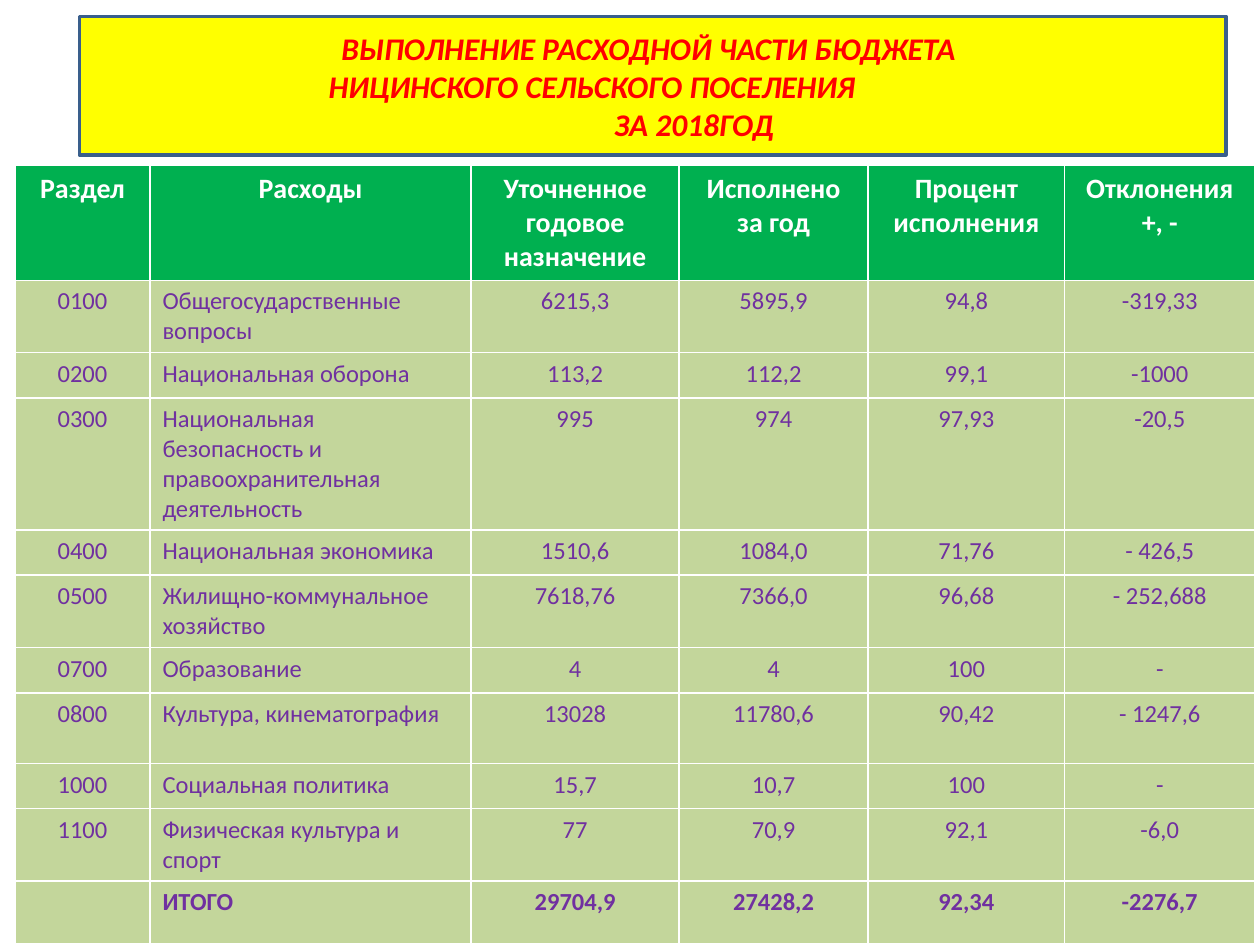
from pptx import Presentation
from pptx import util as u
from pptx.dml.color import RGBColor
from pptx.enum import shapes, text

COLUMN_WIDTHS = [1.07, 2.55, 1.65, 1.5, 1.56, 1.51]
ROW_HEIGHTS = [0.88, 0.56, 0.36, 1.02, 0.36, 0.56, 0.36, 0.56, 0.36, 0.56, 0.5]
BUDGET_ROWS = [
    ["Раздел", "Расходы", "Уточненное годовое назначение", "Исполнено за год",
     "Процент исполнения", "Отклонения +, -"],
    ["0100", "Общегосударственные вопросы", "6215,3", "5895,9", "94,8", "-319,33"],
    ["0200", "Национальная оборона", "113,2", "112,2", "99,1", "-1000"],
    ["0300", "Национальная безопасность и правоохранительная деятельность",
     "995", "974", "97,93", "-20,5"],
    ["0400", "Национальная экономика", "1510,6", "1084,0", "71,76", "- 426,5"],
    ["0500", "Жилищно-коммунальное хозяйство", "7618,76", "7366,0", "96,68", "- 252,688"],
    ["0700", "Образование", "4", "4", "100", "-"],
    ["0800", "Культура, кинематография", "13028", "11780,6", "90,42", "- 1247,6"],
    ["1000", "Социальная политика", "15,7", "10,7", "100", "-"],
    ["1100", "Физическая культура и спорт", "77", "70,9", "92,1", "-6,0"],
    ["", "ИТОГО", "29704,9", "27428,2", "92,34", "-2276,7"],
]
TITLE_LINES = [
    ("ВЫПОЛНЕНИЕ РАСХОДНОЙ ЧАСТИ БЮДЖЕТА", 0.9),
    ("НИЦИНСКОГО СЕЛЬСКОГО ПОСЕЛЕНИЯ", 0),
    ("ЗА 2018ГОД", 1.62),
]
HEADER_FONT = {"name": "Calibri", "size": u.Pt(16), "bold": True}
BODY_FONT = {"name": "Calibri", "size": u.Pt(14), "bold": False}
TOTAL_FONT = {**BODY_FONT, "bold": True}
TITLE_FONT = {"name": "Calibri", "size": u.Pt(18), "bold": True, "italic": True}


def set_all(target, values):
    for name, value in values.items():
        setattr(target, name, value)


def paint(fill, color):
    fill.solid()
    fill.fore_color.rgb = RGBColor.from_string(color)


def write(para, words, font, color, align):
    para.alignment = align
    if words:
        span = para.add_run()
        span.text = words
        set_all(span.font, font)
        paint(span.font.fill, color)


def add_budget_table(slide):
    frame = slide.shapes.add_table(
        len(ROW_HEIGHTS), len(COLUMN_WIDTHS), u.Inches(0.12), u.Inches(1.31),
        u.Inches(sum(COLUMN_WIDTHS)), u.Inches(sum(ROW_HEIGHTS)))
    table = frame.table
    table.horz_banding = False
    for column, width in zip(table.columns, COLUMN_WIDTHS):
        column.width = u.Inches(width)
    for index, (row, height, values) in enumerate(
            zip(table.rows, ROW_HEIGHTS, BUDGET_ROWS)):
        row.height = u.Inches(height)
        header = index == 0
        total = index == len(BUDGET_ROWS) - 1
        font = HEADER_FONT if header else TOTAL_FONT if total else BODY_FONT
        for position, (cell, words) in enumerate(zip(row.cells, values)):
            left = position == 1 and not header
            align = text.PP_ALIGN.LEFT if left else text.PP_ALIGN.CENTER
            paint(cell.fill, "00B050" if header else "C3D69B")
            write(cell.text_frame.paragraphs[0], words, font,
                  "FFFFFF" if header else "7030A0", align)


def add_title_box(slide):
    box = slide.shapes.add_shape(
        shapes.MSO_SHAPE.RECTANGLE,
        u.Inches(0.63), u.Inches(0.13), u.Inches(9.1), u.Inches(1.1))
    box.shadow.inherit = False
    paint(box.fill, "FFFF00")
    paint(box.line.fill, "3A5F8C")
    box.line.width = u.Pt(2)
    frame = box.text_frame
    set_all(frame, {"word_wrap": True, "margin_right": u.Inches(1.06),
                    "vertical_anchor": text.MSO_ANCHOR.MIDDLE})
    for index, (words, indent) in enumerate(TITLE_LINES):
        para = frame.add_paragraph() if index else frame.paragraphs[0]
        write(para, words, TITLE_FONT, "FF0000", text.PP_ALIGN.CENTER)
        para._p.get_or_add_pPr().set("marL", str(u.Inches(indent)))


def main():
    deck = Presentation()
    set_all(deck, {"slide_width": u.Inches(10), "slide_height": u.Inches(7.5)})
    slide = deck.slides.add_slide(deck.slide_layouts[6])
    add_budget_table(slide)
    add_title_box(slide)
    deck.save("out.pptx")


if __name__ == "__main__":
    main()
